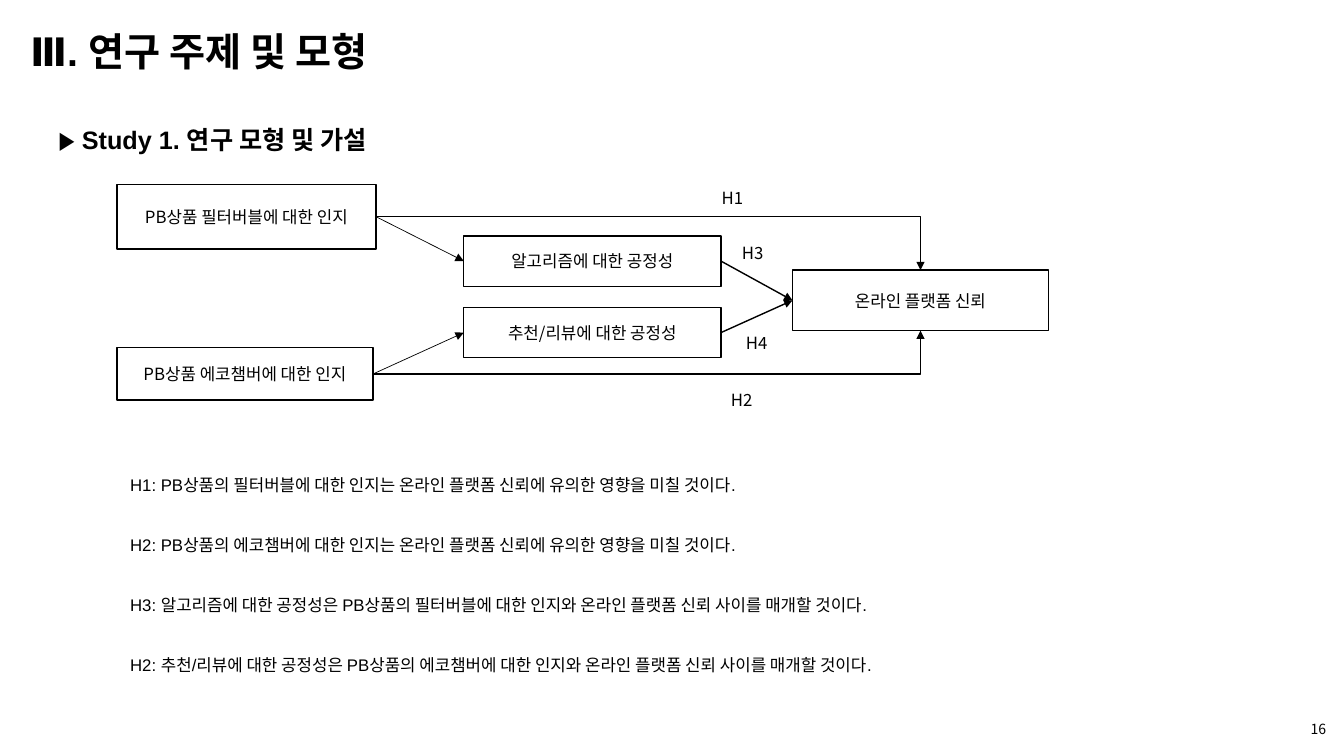
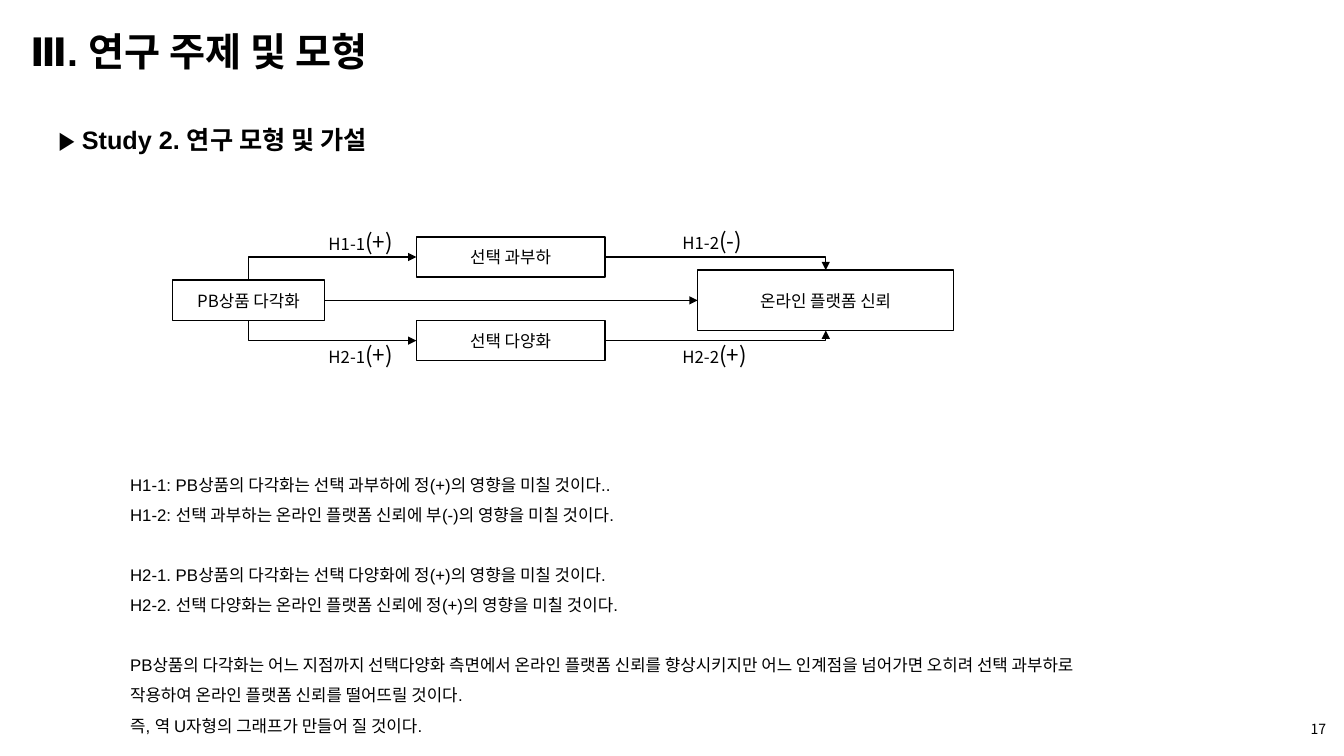
from pptx import Presentation
from pptx.dml.color import RGBColor
from pptx.enum.shapes import MSO_CONNECTOR as Route, MSO_SHAPE as Preset
from pptx.enum.text import MSO_ANCHOR as Anchor, MSO_AUTO_SIZE as AutoSize, PP_ALIGN as Align
from pptx.oxml.ns import qn
from pptx.util import Inches, Pt
from lxml import etree

BLACK, WHITE = "000000", "FFFFFF"
LATIN, KOREAN = "Arial", "Noto Sans CJK KR"
SECTION_TITLE = "Ⅲ. 연구 주제 및 모형"
BODY_PITCH = Pt(21.5)
TOP, LEFT, BOTTOM, RIGHT = range(4)  # connection sites of a rectangle


def color(hex_value):
    return RGBColor.from_string(hex_value)


def style_runs(paragraph, size, font=KOREAN, bold=False):
    for run in paragraph.runs:
        run.font.size = Pt(size)
        run.font.name = font
        run.font.bold = bold
        run.font.color.rgb = color(BLACK)
        east_asian = etree.SubElement(run.font._element, qn("a:ea"))
        east_asian.set("typeface", KOREAN)


def place(shape, left, top, width, height):
    shape.left, shape.top = Inches(left), Inches(top)
    shape.width, shape.height = Inches(width), Inches(height)


def add_text(slide, text, left, top, width, height, wrap=True):
    """Add a text box and return its frame."""
    frame = slide.shapes.add_textbox(
        Inches(left), Inches(top), Inches(width), Inches(height)).text_frame
    frame.word_wrap = wrap
    frame.text = text
    return frame


def fill_title(slide):
    title = slide.shapes.title
    place(title, 0.2, 0.24, 6.95, 0.63)
    frame = title.text_frame
    frame.text = SECTION_TITLE
    frame.auto_size = AutoSize.NONE
    frame.vertical_anchor = Anchor.TOP
    heading = frame.paragraphs[0]
    heading.alignment = Align.LEFT
    heading.line_spacing = Pt(32)
    style_runs(heading, 28, LATIN, bold=True)


def fill_hypotheses(slide, groups):
    """Write groups of lines in the body, parted by one line of space."""
    body = slide.placeholders[1]
    place(body, 1.19, 4.56, 11.49, 2.79)
    frame = body.text_frame
    frame.text = "\n".join(line for group in groups for line in group)
    frame.auto_size = AutoSize.NONE
    frame.vertical_anchor = Anchor.TOP
    openers = {group[0] for group in groups[1:]}
    for paragraph in frame.paragraphs:
        properties = paragraph._p.get_or_add_pPr()
        properties.set("marL", "0")
        properties.set("indent", "0")
        etree.SubElement(properties, qn("a:buNone"))
        paragraph.line_spacing = BODY_PITCH
        paragraph.space_before = BODY_PITCH if paragraph.text in openers else Pt(0)
        style_runs(paragraph, 12, LATIN)


def add_study_slide(prs, page, study, groups):
    """Add a slide with title, study heading, hypotheses and page number."""
    slide = prs.slides.add_slide(prs.slide_layouts[1])
    fill_title(slide)
    fill_hypotheses(slide, groups)

    heading = add_text(slide, f"▶ Study {study}. 연구 모형 및 가설",
                       0.48, 1, 6.67, 0.52).paragraphs[0]
    heading.line_spacing = Pt(35)
    style_runs(heading, 18, LATIN, bold=True)

    footer = add_text(slide, str(page), 10.25, 7.03, 3, 0.4)
    footer.vertical_anchor = Anchor.MIDDLE
    footer.paragraphs[0].alignment = Align.RIGHT
    style_runs(footer.paragraphs[0], 10)
    return slide


def add_construct(slide, text, left, top, width, height):
    """Add one boxed variable of the research model."""
    box = slide.shapes.add_shape(
        Preset.RECTANGLE, Inches(left), Inches(top), Inches(width), Inches(height))
    box.shadow.inherit = False
    box.fill.solid()
    box.fill.fore_color.rgb = color(WHITE)
    box.line.color.rgb = color(BLACK)
    box.line.width = Pt(1)
    frame = box.text_frame
    frame.text = text
    frame.vertical_anchor = Anchor.MIDDLE
    frame.paragraphs[0].alignment = Align.CENTER
    style_runs(frame.paragraphs[0], 12)
    return box


def add_label(slide, text, left, top, sign=""):
    """Name a path, with its expected sign in larger type."""
    width, height = (0.87, 0.37) if sign else (0.42, 0.3)
    paragraph = add_text(slide, text, left, top, width, height, wrap=False).paragraphs[0]
    if sign:
        paragraph.add_run().text = sign
    style_runs(paragraph, 12)
    if sign:
        paragraph.runs[1].font.size = Pt(16)


def add_path(slide, start, start_site, end, end_site, width=1, arrow="tailEnd"):
    """Join two boxes; a path that changes direction gets one corner.

    A cornered path runs sideways from its start, so one that should leave its
    cause vertically is drawn from the effect, with arrow="headEnd".
    """
    cornered = end_site in (TOP, BOTTOM)
    route = Route.ELBOW if cornered else Route.STRAIGHT
    path = slide.shapes.add_connector(route, 0, 0, 0, 0)
    path.begin_connect(start, start_site)
    path.end_connect(end, end_site)
    path.line.color.rgb = color(BLACK)
    path.line.width = Pt(width)
    properties = path.element.spPr
    if cornered:
        properties.find(qn("a:prstGeom")).set("prst", "bentConnector2")
    etree.SubElement(properties.find(qn("a:ln")), qn(f"a:{arrow}")).set("type", "triangle")
    etree.SubElement(properties, qn("a:effectLst"))


def add_study_1(prs):
    slide = add_study_slide(prs, 16, 1, [
        ["H1: PB상품의 필터버블에 대한 인지는 온라인 플랫폼 신뢰에 유의한 영향을 미칠 것이다."],
        ["H2: PB상품의 에코챔버에 대한 인지는 온라인 플랫폼 신뢰에 유의한 영향을 미칠 것이다."],
        ["H3: 알고리즘에 대한 공정성은 PB상품의 필터버블에 대한 인지와 온라인 플랫폼 신뢰 사이를 매개할 것이다."],
        ["H2: 추천/리뷰에 대한 공정성은 PB상품의 에코챔버에 대한 인지와 온라인 플랫폼 신뢰 사이를 매개할 것이다."],
    ])
    trust = add_construct(slide, "온라인 플랫폼 신뢰", 7.86, 2.68, 2.54, 0.6)
    filter_bubble = add_construct(slide, "PB상품 필터버블에 대한 인지", 1.16, 1.83, 2.57, 0.64)
    echo_chamber = add_construct(slide, "PB상품 에코챔버에 대한 인지", 1.16, 3.45, 2.54, 0.52)
    algorithm = add_construct(slide, "알고리즘에 대한 공정성", 4.6, 2.34, 2.55, 0.5)
    review = add_construct(slide, "추천/리뷰에 대한 공정성", 4.6, 3.05, 2.55, 0.5)

    for cause, mediator, trust_site in ((filter_bubble, algorithm, TOP),
                                        (echo_chamber, review, BOTTOM)):
        add_path(slide, cause, RIGHT, trust, trust_site)
        add_path(slide, cause, RIGHT, mediator, LEFT, width=0.5)
        add_path(slide, mediator, RIGHT, trust, LEFT)

    for text, left, top in (("H1", 7.06, 1.81), ("H2", 7.15, 3.82),
                            ("H3", 7.26, 2.36), ("H4", 7.3, 3.25)):
        add_label(slide, text, left, top)


def add_study_2(prs):
    slide = add_study_slide(prs, 17, 2, [
        ["H1-1: PB상품의 다각화는 선택 과부하에 정(+)의 영향을 미칠 것이다..",
         "H1-2: 선택 과부하는 온라인 플랫폼 신뢰에 부(-)의 영향을 미칠 것이다."],
        ["H2-1. PB상품의 다각화는 선택 다양화에 정(+)의 영향을 미칠 것이다.",
         "H2-2. 선택 다양화는 온라인 플랫폼 신뢰에 정(+)의 영향을 미칠 것이다."],
        ["PB상품의 다각화는 어느 지점까지 선택다양화 측면에서 온라인 플랫폼 신뢰를 향상시키지만 "
         "어느 인계점을 넘어가면 오히려 선택 과부하로",
         "작용하여 온라인 플랫폼 신뢰를 떨어뜨릴 것이다.",
         "즉, 역 U자형의 그래프가 만들어 질 것이다."],
    ])
    trust = add_construct(slide, "온라인 플랫폼 신뢰", 6.92, 2.68, 2.54, 0.6)
    diversification = add_construct(slide, "PB상품 다각화", 1.71, 2.78, 1.51, 0.4)
    overload = add_construct(slide, "선택 과부하", 4.13, 2.35, 1.87, 0.4)
    variety = add_construct(slide, "선택 다양화", 4.13, 3.18, 1.87, 0.4)

    add_path(slide, diversification, RIGHT, trust, LEFT)
    for mediator, site in ((overload, TOP), (variety, BOTTOM)):
        add_path(slide, mediator, LEFT, diversification, site, arrow="headEnd")
        add_path(slide, mediator, RIGHT, trust, site)

    for text, sign, left, top in (("H1-1", "(+)", 3.16, 2.21), ("H1-2", "(-)", 6.67, 2.2),
                                  ("H2-1", "(+)", 3.16, 3.34), ("H2-2", "(+)", 6.67, 3.34)):
        add_label(slide, text, left, top, sign)


def main():
    prs = Presentation()
    prs.slide_width, prs.slide_height = Inches(13.33), Inches(7.5)
    add_study_1(prs)
    add_study_2(prs)
    prs.save("out.pptx")


if __name__ == "__main__":
    main()
